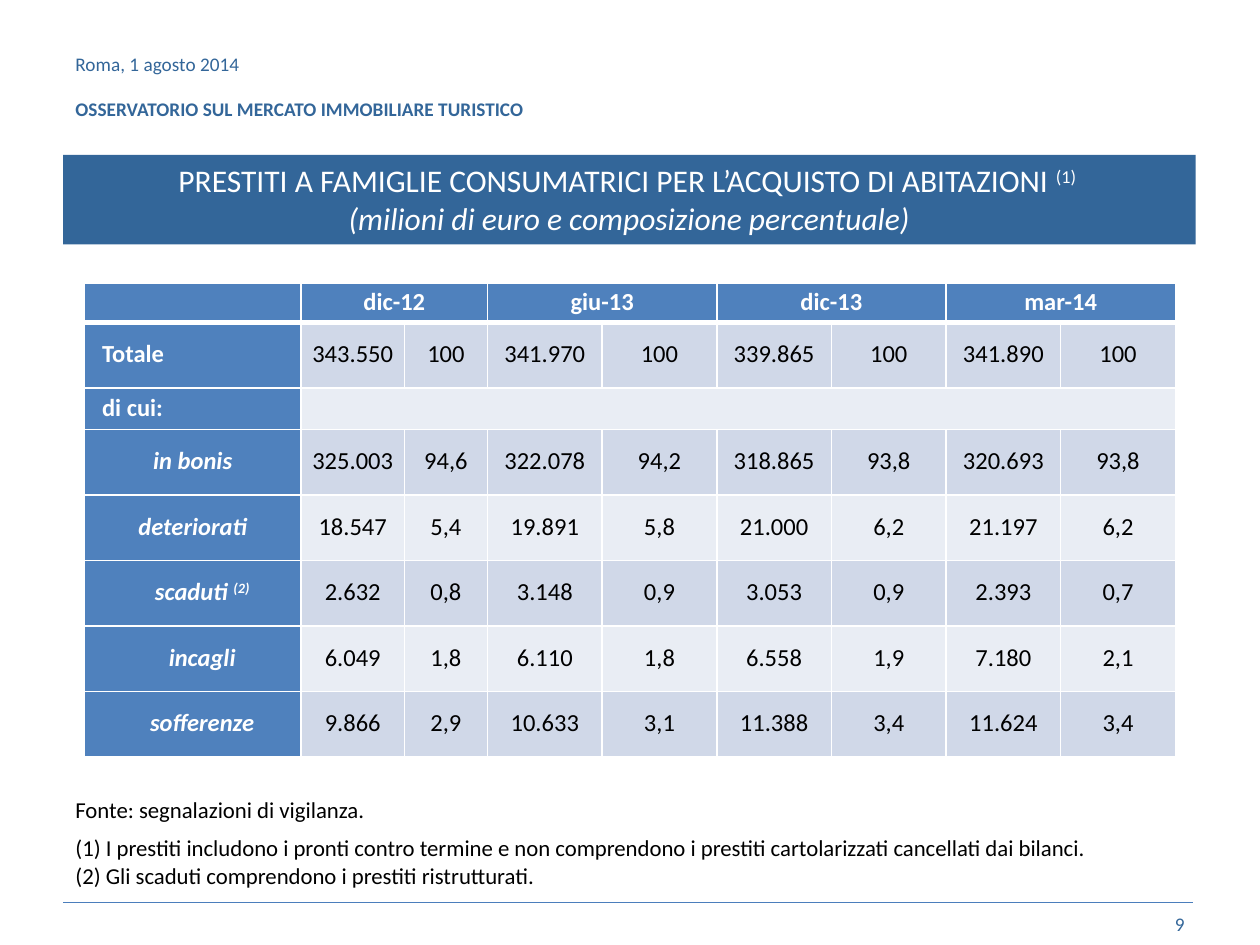
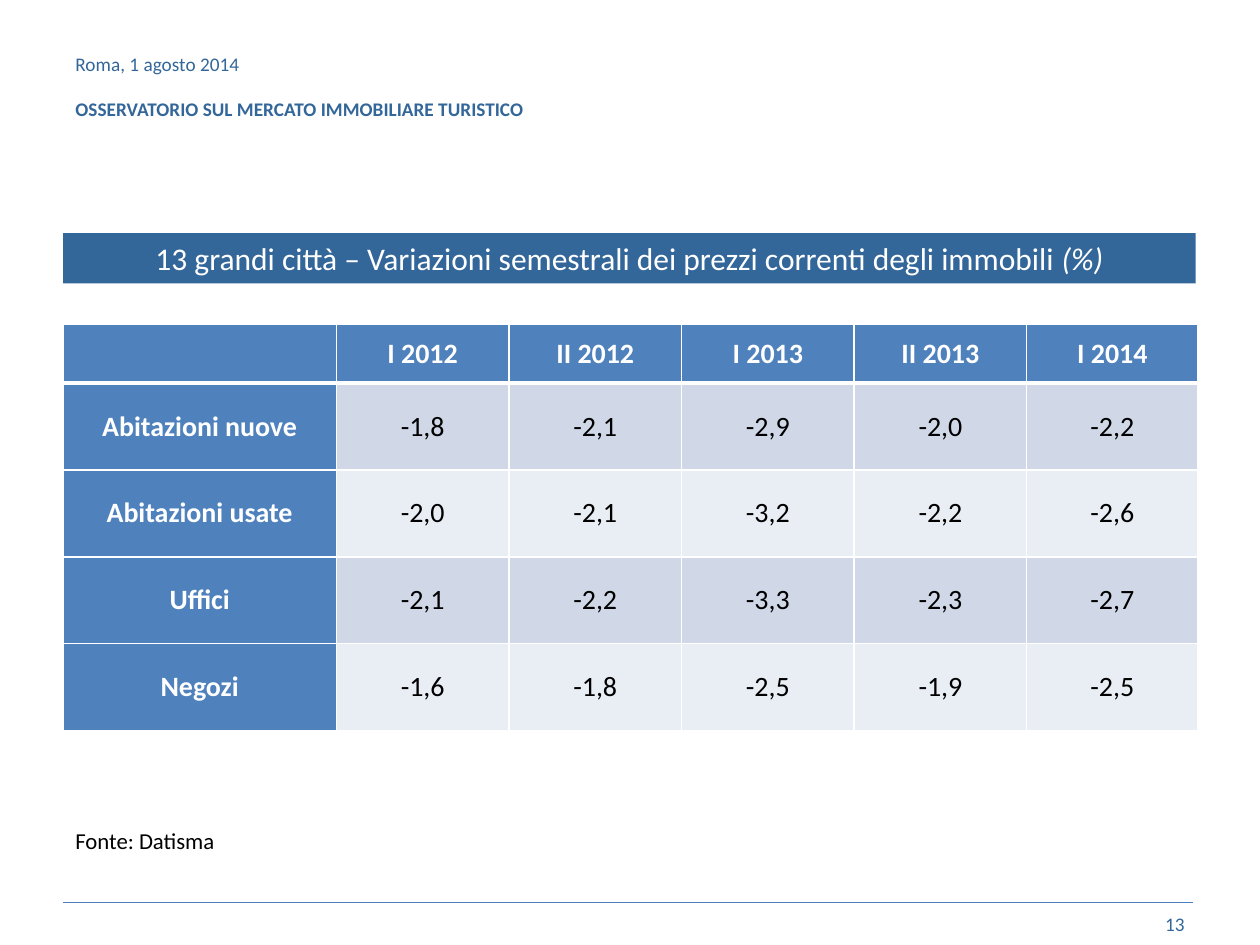
from dataclasses import dataclass

from lxml import etree
from pptx import Presentation
from pptx import util as u
from pptx.dml.color import RGBColor
from pptx.enum import shapes, text
from pptx.oxml import ns

LEFT, CENTER, RIGHT, JUSTIFY = (
    text.PP_ALIGN.LEFT, text.PP_ALIGN.CENTER, text.PP_ALIGN.RIGHT, text.PP_ALIGN.JUSTIFY)
MIDDLE, TOP = text.MSO_ANCHOR.MIDDLE, text.MSO_ANCHOR.TOP


@dataclass(frozen=True)
class Theme:
    font: str = "Calibri"
    brand: str = "336699"
    rule: str = "4B7EBC"
    head: str = "4F81BD"
    bands: tuple = ("E9EDF4", "D0D8E8")
    white: str = "FFFFFF"
    black: str = "000000"
    small: int = 11
    note: int = 13
    title: int = 18


T = Theme()


@dataclass(frozen=True)
class Run:
    text: str
    bold: bool = False
    italic: bool = False
    sup: bool = False


@dataclass(frozen=True)
class Para:
    runs: tuple
    align: int = LEFT
    before: int = 0
    indent: int = 0


def px(n):
    """One px is a hundredth of an inch."""
    return u.Emu(n * 9144)


def rgb(value):
    return RGBColor.from_string(value)


def write_para(p, para, size, color):
    p.alignment = para.align
    if para.before:
        p.space_before = u.Pt(para.before)
    if para.indent:
        p._p.get_or_add_pPr().set("indent", str(px(para.indent)))
    for run in para.runs:
        r = p.add_run()
        r.text = run.text
        f = r.font
        f.name, f.size, f.bold, f.italic = T.font, u.Pt(size), run.bold, run.italic
        f.color.rgb = rgb(color)
        if run.sup:
            r._r.get_or_add_rPr().set("baseline", "30000")


def fill_frame(tf, paras, size, color, anchor, grow):
    tf.word_wrap = True
    tf.vertical_anchor = anchor
    if grow:
        tf.auto_size = text.MSO_AUTO_SIZE.SHAPE_TO_FIT_TEXT
    for i, para in enumerate(paras):
        p = tf.add_paragraph() if i else tf.paragraphs[0]
        write_para(p, para, size, color)


def add_text(s, box, paras, size, color, anchor=TOP, grow=False):
    sp = s.shapes.add_textbox(*map(px, box))
    fill_frame(sp.text_frame, paras, size, color, anchor, grow)


def add_title_band(s, top, height, paras):
    sp = s.shapes.add_shape(
        shapes.MSO_SHAPE.RECTANGLE, px(50), px(top), px(899), px(height))
    sp.shadow.inherit = False
    sp.fill.solid()
    sp.fill.fore_color.rgb = rgb(T.brand)
    sp.line.fill.background()
    fill_frame(sp.text_frame, paras, T.title, T.white, TOP, True)


def add_rule(s):
    c = s.shapes.add_connector(
        shapes.MSO_CONNECTOR.STRAIGHT, px(50), px(716), px(947), px(716))
    c.line.color.rgb = rgb(T.rule)
    c.line.width = u.Pt(0.25)
    etree.SubElement(c._element.spPr, ns.qn("a:effectLst"))


def add_slide(prs, number):
    """Blank slide with the shared heading, rule and page number."""
    s = prs.slides.add_slide(prs.slide_layouts[6])
    add_rule(s)
    heading = [
        Para((Run("Roma, 1 agosto 2014"),)),
        Para((Run("OSSERVATORIO SUL MERCATO IMMOBILIARE TURISTICO", bold=True),), before=12),
    ]
    add_text(s, (50, 30, 741, 77), heading, T.small, T.brand, MIDDLE)
    add_text(s, (717, 713, 233, 40), [Para((Run(str(number)),), RIGHT)],
             T.small, T.brand, MIDDLE)
    return s


def set_borders(cell, row):
    """White borders, thicker under the header row."""
    widths = {"lnL": 1, "lnR": 1, "lnT": 3 if row == 1 else 1, "lnB": 1 if row else 3}
    tcPr = cell._tc.get_or_add_tcPr()
    for side, pt in widths.items():
        ln = etree.SubElement(tcPr, ns.qn(f"a:{side}"), w=str(u.Pt(pt)))
        fill = etree.SubElement(ln, ns.qn("a:solidFill"))
        etree.SubElement(fill, ns.qn("a:srgbClr"), val=T.white)


def add_data_table(s, origin, widths, heights, rows, size, inset, spacing=None, merges=()):
    """Cells are strings, or a Para where a label needs its own style."""
    frame = s.shapes.add_table(
        len(heights), len(widths), *map(px, (*origin, sum(widths), sum(heights))))
    table = frame.table
    for column, width in zip(table.columns, widths):
        column.width = px(width)
    for row, height in zip(table.rows, heights):
        row.height = px(height)
    for i, row in enumerate(rows):
        for j, value in enumerate(row):
            cell = table.cell(i, j)
            is_head = i == 0 or j == 0
            set_borders(cell, i)
            cell.fill.solid()
            cell.fill.fore_color.rgb = rgb(T.head if is_head else T.bands[i % 2])
            cell.vertical_anchor = MIDDLE
            cell.margin_left = cell.margin_right = px(inset)
            cell.margin_top = cell.margin_bottom = 0
            p = cell.text_frame.paragraphs[0]
            if spacing:
                p.line_spacing = u.Pt(spacing)
            if value:
                para = value if isinstance(value, Para) else Para(
                    (Run(value, bold=is_head),), CENTER)
                write_para(p, para, size, T.white if is_head else T.black)
    for row, first, last in merges:
        table.cell(row, first).merge(table.cell(row, last))


def main_label(label):
    return Para((Run(label, bold=True),), LEFT, indent=9)


def sub_label(label, indent=0, note=None):
    runs = [Run(label, bold=True, italic=True)]
    if note:
        runs.append(Run(note, bold=True, italic=True, sup=True))
    return Para(tuple(runs), CENTER, indent=indent)


def build_loans(prs):
    s = add_slide(prs, 9)
    add_title_band(s, 123, 71, [
        Para((Run("PRESTITI A FAMIGLIE CONSUMATRICI PER L’ACQUISTO DI ABITAZIONI "),
              Run("(1) ", sup=True)), CENTER),
        Para((Run("(milioni di euro e composizione percentuale)", italic=True),), CENTER),
    ])
    periods = ["dic-12", "giu-13", "dic-13", "mar-14"]
    rows = [
        [""] + [value for period in periods for value in (period, "")],
        [main_label("Totale"),
         "343.550", "100", "341.970", "100", "339.865", "100", "341.890", "100"],
        [main_label("di cui:")] + [""] * 8,
        [sub_label("in bonis"),
         "325.003", "94,6", "322.078", "94,2", "318.865", "93,8", "320.693", "93,8"],
        [sub_label("deteriorati"),
         "18.547", "5,4", "19.891", "5,8", "21.000", "6,2", "21.197", "6,2"],
        [sub_label("scaduti ", 15, "(2)"),
         "2.632", "0,8", "3.148", "0,9", "3.053", "0,9", "2.393", "0,7"],
        [sub_label("incagli", 15),
         "6.049", "1,8", "6.110", "1,8", "6.558", "1,9", "7.180", "2,1"],
        [sub_label("sofferenze", 15),
         "9.866", "2,9", "10.633", "3,1", "11.388", "3,4", "11.624", "3,4"],
    ]
    merges = [(0, j, j + 1) for j in range(1, 9, 2)] + [(2, 1, 8)]
    add_data_table(s, (67, 225), [172, 82, 66] + [91] * 6, [31, 52, 33] + [52] * 5,
                   rows, 14, 5, 16, merges)
    add_text(s, (50, 627, 899, 84), [
        Para((Run("Fonte: segnalazioni di vigilanza."),), JUSTIFY),
        Para((Run("(1) I prestiti includono i pronti contro termine e non comprendono "
                  "i prestiti cartolarizzati cancellati dai bilanci."),), JUSTIFY, 6),
        Para((Run("(2) Gli scaduti comprendono i prestiti ristrutturati."),), JUSTIFY),
    ], T.note, T.black, grow=True)


def build_prices(prs):
    s = add_slide(prs, 13)
    add_title_band(s, 185, 40, [
        Para((Run("13 grandi città – Variazioni semestrali dei prezzi correnti degli immobili "),
              Run("(%)", italic=True)), CENTER),
    ])
    rows = [
        ["", "I 2012", "II 2012", "I 2013", "II 2013", "I 2014"],
        ["Abitazioni nuove", "-1,8", "-2,1", "-2,9", "-2,0", "-2,2"],
        ["Abitazioni usate", "-2,0", "-2,1", "-3,2", "-2,2", "-2,6"],
        ["Uffici", "-2,1", "-2,2", "-3,3", "-2,3", "-2,7"],
        ["Negozi", "-1,6", "-1,8", "-2,5", "-1,9", "-2,5"],
    ]
    add_data_table(s, (50, 257), [217] + [137] * 4 + [136], [47] + [69] * 4, rows, 16, 7)
    add_text(s, (50, 651, 349, 32), [Para((Run("Fonte: Datisma"),), JUSTIFY)],
             T.note, T.black, grow=True)


def main():
    prs = Presentation()
    prs.slide_width, prs.slide_height = px(1000), px(750)
    build_loans(prs)
    build_prices(prs)
    prs.save("out.pptx")


if __name__ == "__main__":
    main()
